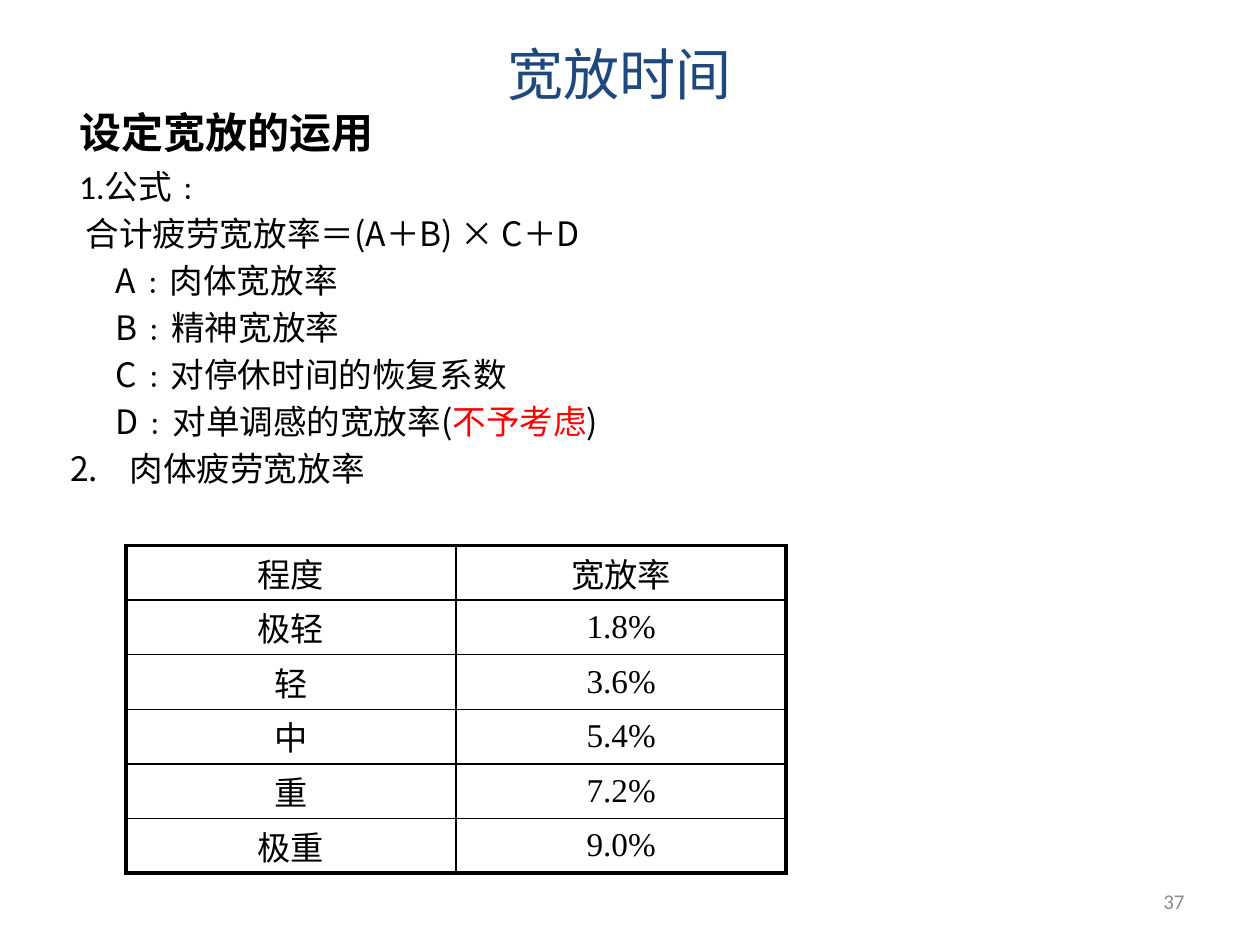
import pptx
import pptx.util
import pptx.dml.color
import pptx.enum.text
import pptx.oxml.ns
import lxml.etree

Inches = pptx.util.Inches
Pt = pptx.util.Pt
hues = {"ink": "000000", "title": "1F497D", "red": "FF0000", "gray": "8C8C8C"}
align = pptx.enum.text.PP_ALIGN
middle = pptx.enum.text.MSO_ANCHOR.MIDDLE
noto = "Noto Sans CJK TC"


def style(font, size, face, hue):
    font.size = Pt(size)
    font.name = face
    font.color.rgb = pptx.dml.color.RGBColor.from_string(hues[hue])


def edge(cell, side, width):
    qn = pptx.oxml.ns.qn
    props = cell._tc.get_or_add_tcPr()
    line = lxml.etree.SubElement(props, qn("a:" + side), w=str(Pt(width)))
    fill = lxml.etree.SubElement(line, qn("a:solidFill"))
    lxml.etree.SubElement(fill, qn("a:srgbClr"), val=hues["ink"])


deck = pptx.Presentation()
deck.slide_width, deck.slide_height = Inches(10), Inches(7.5)
slide = deck.slides.add_slide(deck.slide_layouts[6])

body = slide.shapes.add_textbox(Inches(0.04), Inches(0.7), Inches(9.25), Inches(6.57)).text_frame
body.word_wrap = True
lines = [
    (["设定宽放的运用"], 0.49, 0, 24, "Calibri"),
    (["1.公式﹕"], 0.49, 0, 19.2, "Calibri"),
    (["合计疲劳宽放率＝(A＋B) × C＋D"], 0.54, 0, 19.2, noto),
    (["A﹕肉体宽放率"], 0.78, 0, 19.2, noto),
    (["B﹕精神宽放率"], 0.78, 0, 19.2, noto),
    (["C﹕对停休时间的恢复系数"], 0.78, 0, 19.2, noto),
    (["D﹕对单调感的宽放率(", "不予考虑", ")"], 0.78, 0, 19.2, noto),
    (["2.\t肉体疲劳宽放率"], 0.89, -0.47, 19.2, noto),
]
for i, (parts, left, hang, size, face) in enumerate(lines):
    para = body.paragraphs[0] if i == 0 else body.add_paragraph()
    para.line_spacing = Pt(36 if i == 0 else 26.9)
    para.space_after = Pt(1 if i == 0 else 0)
    props = para._p.get_or_add_pPr()
    props.set("marL", str(Inches(left)))
    props.set("indent", str(Inches(hang)))
    style(para.font, size, face, "ink")
    para.font.bold = i == 0
    for part in parts:
        run = para.add_run()
        run.text = part
        if part == "不予考虑":
            style(run.font, size, face, "red")

rows = [
    ("程度", "宽放率"),
    ("极轻", "1.8%"),
    ("轻", "3.6%"),
    ("中", "5.4%"),
    ("重", "7.2%"),
    ("极重", "9.0%"),
]
grid = slide.shapes.add_table(6, 2, Inches(1), Inches(4.33), Inches(5.24), Inches(2.6)).table
for r, row in enumerate(rows):
    for c, text in enumerate(row):
        cell = grid.cell(r, c)
        cell.text = text
        cell.vertical_anchor = middle
        cell.margin_left = cell.margin_right = Inches(0.05)
        cell.margin_top = cell.margin_bottom = Inches(0.02)
        para = cell.text_frame.paragraphs[0]
        para.alignment = align.CENTER
        style(para.font, 19, "Times New Roman", "ink")
        para.font.bold = False
        outer = {"lnL": c == 0, "lnR": c == 1, "lnT": r == 0, "lnB": r == 5}
        for side, thick in outer.items():
            edge(cell, side, 2.25 if thick else 1)
        cell.fill.background()

labels = [
    ("宽放时间", 0.54, 0.08, 8.75, 1, 32, "title", align.CENTER),
    ("37", 7.17, 6.95, 2.33, 0.4, 12, "gray", align.RIGHT),
]
for text, left, top, width, height, size, hue, side in labels:
    frame = slide.shapes.add_textbox(Inches(left), Inches(top), Inches(width), Inches(height)).text_frame
    frame.word_wrap = True
    frame.vertical_anchor = middle
    frame.text = text
    para = frame.paragraphs[0]
    para.alignment = side
    style(para.font, size, "Calibri", hue)

deck.save("out.pptx")
